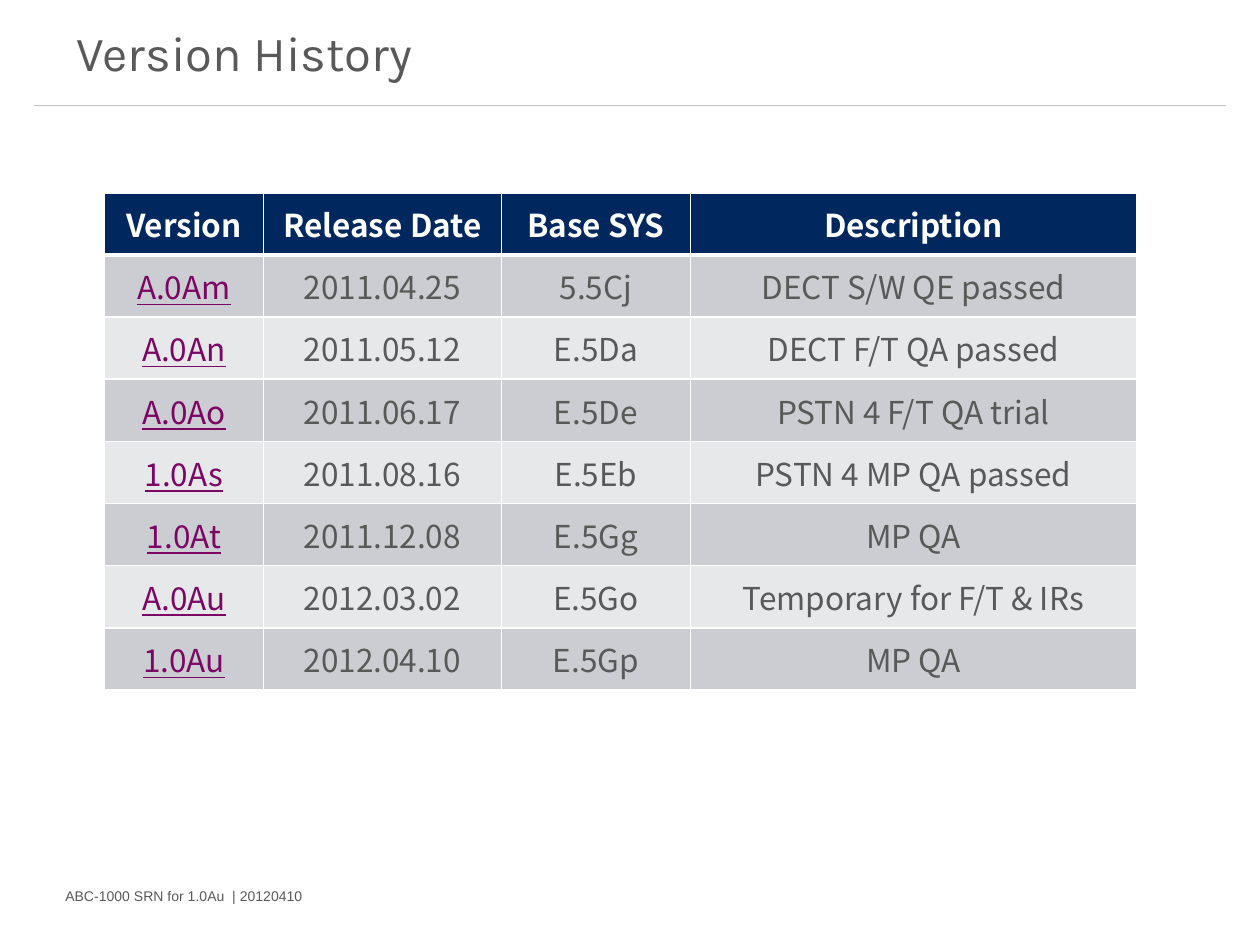
"""Build the Version History slide with its release table."""
from dataclasses import dataclass

import lxml.etree
import pptx
import pptx.dml.color
import pptx.enum.shapes
import pptx.enum.text
import pptx.oxml.ns
import pptx.util

COLORS = {
    "text": "595959", "rule": "BFBFBF", "white": "FFFFFF", "header": "00285E",
    "odd": "CCCDD2", "even": "E7E8EA", "version": "7B0664",
}
SLIDE_WIDTH = pptx.util.Inches(10)
SLIDE_HEIGHT = pptx.util.Inches(7.5)
HEADINGS = ("Version", "Release Date", "Base SYS", "Description")
COLUMN_PERCENTS = (12.6, 18.9, 15, 35.4)
ROW_PERCENT = 6.58
MIDDLE = pptx.enum.text.MSO_ANCHOR.MIDDLE


@dataclass(frozen=True)
class Release:
    version: str
    date: str
    base: str
    description: str

    def entries(self) -> tuple[str, ...]:
        return self.version, self.date, self.base, self.description


@dataclass(frozen=True)
class Style:
    font: str
    size: float
    color: str = "text"
    bold: bool = False
    underline: bool = False


@dataclass(frozen=True)
class Caption:
    text: str
    left: float
    top: float
    width: float
    height: float
    style: Style
    anchor: pptx.enum.text.MSO_ANCHOR


RELEASES = (
    Release("A.0Am", "2011.04.25", "5.5Cj", "DECT S/W QE passed"),
    Release("A.0An", "2011.05.12", "E.5Da", "DECT F/T QA passed"),
    Release("A.0Ao", "2011.06.17", "E.5De", "PSTN 4 F/T QA trial"),
    Release("1.0As", "2011.08.16", "E.5Eb", "PSTN 4 MP QA passed"),
    Release("1.0At", "2011.12.08", "E.5Gg", "MP QA"),
    Release("A.0Au", "2012.03.02", "E.5Go", "Temporary for F/T & IRs"),
    Release("1.0Au", "2012.04.10", "E.5Gp", "MP QA"),
)
CAPTIONS = (
    Caption("ABC-1000 SRN for 1.0Au  | 20120410", 4.2, 92.27, 38.6, 5.07,
            Style("Arial", 8), MIDDLE),
    Caption("Version History", 5.1, 1.73, 89.8, 7.33,
            Style("Karla", 28), pptx.enum.text.MSO_ANCHOR.TOP),
)
TABLE_FONT = "Noto Sans CJK KR"
HEADING_STYLE = Style(TABLE_FONT, 18, "white", bold=True)
VERSION_STYLE = Style(TABLE_FONT, 18, "version", underline=True)
DETAIL_STYLE = Style(TABLE_FONT, 18)


def across(percent: float) -> int:
    return round(SLIDE_WIDTH * percent / 100)


def down(percent: float) -> int:
    return round(SLIDE_HEIGHT * percent / 100)


def rgb(name: str) -> pptx.dml.color.RGBColor:
    return pptx.dml.color.RGBColor.from_string(COLORS[name])


def write(paragraph, text: str, style: Style) -> None:
    paragraph.text = text
    font = paragraph.font
    font.name = style.font
    font.size = pptx.util.Pt(style.size)
    font.bold = style.bold
    font.underline = style.underline
    font.color.rgb = rgb(style.color)


def draw_caption(slide, caption: Caption) -> None:
    box = slide.shapes.add_textbox(across(caption.left), down(caption.top),
                                   across(caption.width), down(caption.height))
    box.text_frame.word_wrap = True
    box.text_frame.vertical_anchor = caption.anchor
    write(box.text_frame.paragraphs[0], caption.text, caption.style)


def draw_rule(slide) -> None:
    rule = slide.shapes.add_connector(pptx.enum.shapes.MSO_CONNECTOR.STRAIGHT,
                                      across(2.7), down(11.2), across(97.3), down(11.2))
    rule.line.color.rgb = rgb("rule")
    rule.line.width = pptx.util.Pt(0.75)
    lxml.etree.SubElement(rule._element.spPr, pptx.oxml.ns.qn("a:effectLst"))


def add_border(cell, side: str, points: float) -> None:
    border = lxml.etree.SubElement(cell._tc.get_or_add_tcPr(), pptx.oxml.ns.qn(f"a:ln{side}"),
                                   w=str(pptx.util.Pt(points)))
    fill = lxml.etree.SubElement(border, pptx.oxml.ns.qn("a:solidFill"))
    lxml.etree.SubElement(fill, pptx.oxml.ns.qn("a:srgbClr"), val=COLORS["white"])


def fill_cell(cell, text: str, style: Style, fill: str, top: float, bottom: float) -> None:
    for side, points in (("L", 1), ("R", 1), ("T", top), ("B", bottom)):
        add_border(cell, side, points)
    cell.fill.solid()
    cell.fill.fore_color.rgb = rgb(fill)
    cell.vertical_anchor = MIDDLE
    paragraph = cell.text_frame.paragraphs[0]
    write(paragraph, text, style)
    paragraph.alignment = pptx.enum.text.PP_ALIGN.CENTER


def draw_history(slide) -> None:
    row_count = len(RELEASES) + 1
    history = slide.shapes.add_table(
        row_count, len(HEADINGS), across(8.3), down(20.4),
        across(sum(COLUMN_PERCENTS)), down(ROW_PERCENT * row_count)).table
    for column, percent in zip(history.columns, COLUMN_PERCENTS):
        column.width = across(percent)
    for row in history.rows:
        row.height = down(ROW_PERCENT)
    for column, heading in enumerate(HEADINGS):
        fill_cell(history.cell(0, column), heading, HEADING_STYLE, "header", 1, 3)
    for row, release in enumerate(RELEASES, start=1):
        fill = "odd" if row % 2 else "even"
        for column, entry in enumerate(release.entries()):
            style = DETAIL_STYLE if column else VERSION_STYLE
            fill_cell(history.cell(row, column), entry, style, fill, 3 if row == 1 else 1, 1)


def main() -> None:
    deck = pptx.Presentation()
    deck.slide_width = SLIDE_WIDTH
    deck.slide_height = SLIDE_HEIGHT
    slide = deck.slides.add_slide(deck.slide_layouts[6])
    draw_rule(slide)
    for caption in CAPTIONS:
        draw_caption(slide, caption)
    draw_history(slide)
    deck.save("out.pptx")


if __name__ == "__main__":
    main()
